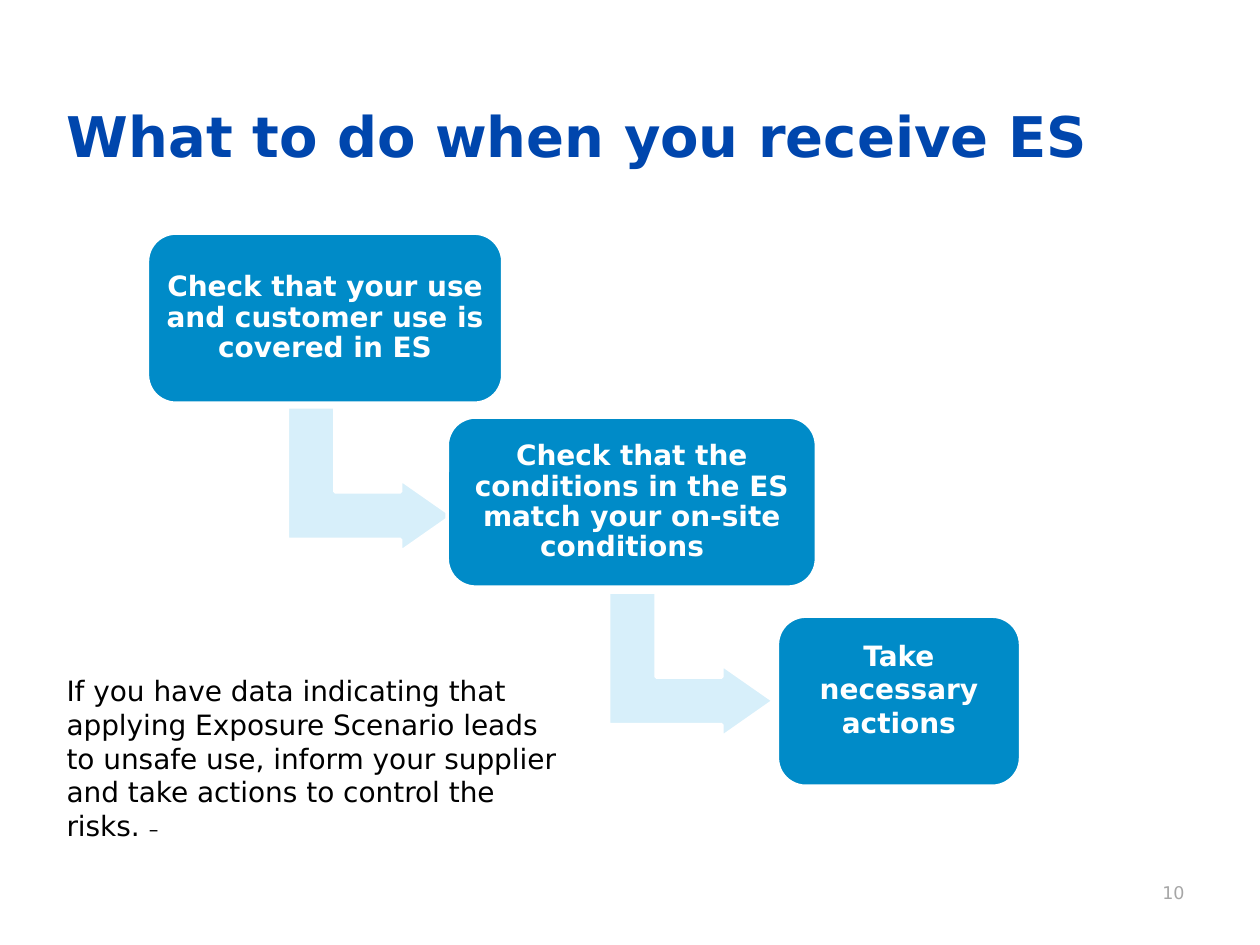
import pptx
import pptx.dml.color
import pptx.enum.shapes
import pptx.enum.text
import pptx.util
from pptx.util import Inches

COLORS = {
    "title": "0046AD",
    "step": "008BC8",
    "arrow": "D7EFFA",
    "white": "FFFFFF",
    "body": "000000",
    "number": "A6A6A6",
}
ALIGN = pptx.enum.text.PP_ALIGN
SHAPES = pptx.enum.shapes.MSO_SHAPE


class SlideBuilder:
    font = "DejaVu Sans"

    def __init__(self, slide):
        self.slide = slide

    def color(self, name):
        return pptx.dml.color.RGBColor.from_string(COLORS[name])

    def style_run(self, run, size, color, bold=False):
        run.font.name = self.font
        run.font.size = pptx.util.Pt(size)
        run.font.bold = bold
        run.font.color.rgb = self.color(color)

    def text(self, box, content, size, color, bold=False, align=ALIGN.LEFT):
        shape = self.slide.shapes.add_textbox(*map(Inches, box))
        shape.text_frame.word_wrap = True
        paragraph = shape.text_frame.paragraphs[0]
        paragraph.text = content
        paragraph.alignment = align
        self.style_run(paragraph.runs[0], size, color, bold)
        return paragraph

    def filled_shape(self, kind, box, fill):
        shape = self.slide.shapes.add_shape(kind, *map(Inches, box))
        shape.shadow.inherit = False
        shape.fill.solid()
        shape.fill.fore_color.rgb = self.color(fill)
        shape.line.color.rgb = self.color("white")
        shape.line.width = pptx.util.Pt(2)
        return shape

    def arrow(self, left, top):
        """Add an arrow that leads down and then right; the frame is given before rotation."""
        shape = self.filled_shape(SHAPES.BENT_UP_ARROW, (left, top, 1.15, 1.31), "arrow")
        shape.rotation = 90
        for index, value in enumerate((0.328, 0.25, 0.358)):
            shape.adjustments[index] = value

    def step(self, left, top, width, content, line_spacing=0.9, lift=0):
        """Add a step box; lift is the extra bottom inset that raises its text."""
        shape = self.filled_shape(SHAPES.ROUNDED_RECTANGLE, (left, top, width, 1.35), "step")
        frame = shape.text_frame
        frame.text = content
        frame.word_wrap = True
        frame.vertical_anchor = pptx.enum.text.MSO_ANCHOR.MIDDLE
        frame.margin_left = frame.margin_right = frame.margin_top = Inches(0.06)
        frame.margin_bottom = Inches(0.06 + lift)
        paragraph = frame.paragraphs[0]
        paragraph.alignment = ALIGN.CENTER
        paragraph.line_spacing = line_spacing
        self.style_run(paragraph.runs[0], 16, "white", bold=True)


def main():
    presentation = pptx.Presentation()
    presentation.slide_width = Inches(10)
    presentation.slide_height = Inches(7.5)
    builder = SlideBuilder(presentation.slides.add_slide(presentation.slide_layouts[6]))

    builder.text((0.43, 0.76, 8.82, 0.59), "What to do when you receive ES", 32, "title", bold=True)

    builder.arrow(2.36, 3.15)
    builder.step(1.17, 1.85, 2.82, "Check that your use and customer use is covered in ES")
    builder.arrow(4.91, 4.62)
    builder.step(3.55, 3.31, 2.93, "Check that the conditions in the ES match your on-site conditions  ")
    builder.step(6.17, 4.89, 1.93, "Take necessary actions", line_spacing=1.0, lift=0.2)

    advice = builder.text(
        (0.43, 5.3, 4.1, 1.45),
        "If you have data indicating that applying Exposure Scenario leads to unsafe use, "
        "inform your supplier and take actions to control the risks. ",
        16, "body")
    dash = advice.add_run()
    dash.text = "–"
    builder.style_run(dash, 11, "body")

    builder.text((7.17, 6.95, 2.33, 0.4), "10", 10, "number", align=ALIGN.RIGHT)
    presentation.save("out.pptx")


if __name__ == "__main__":
    main()
